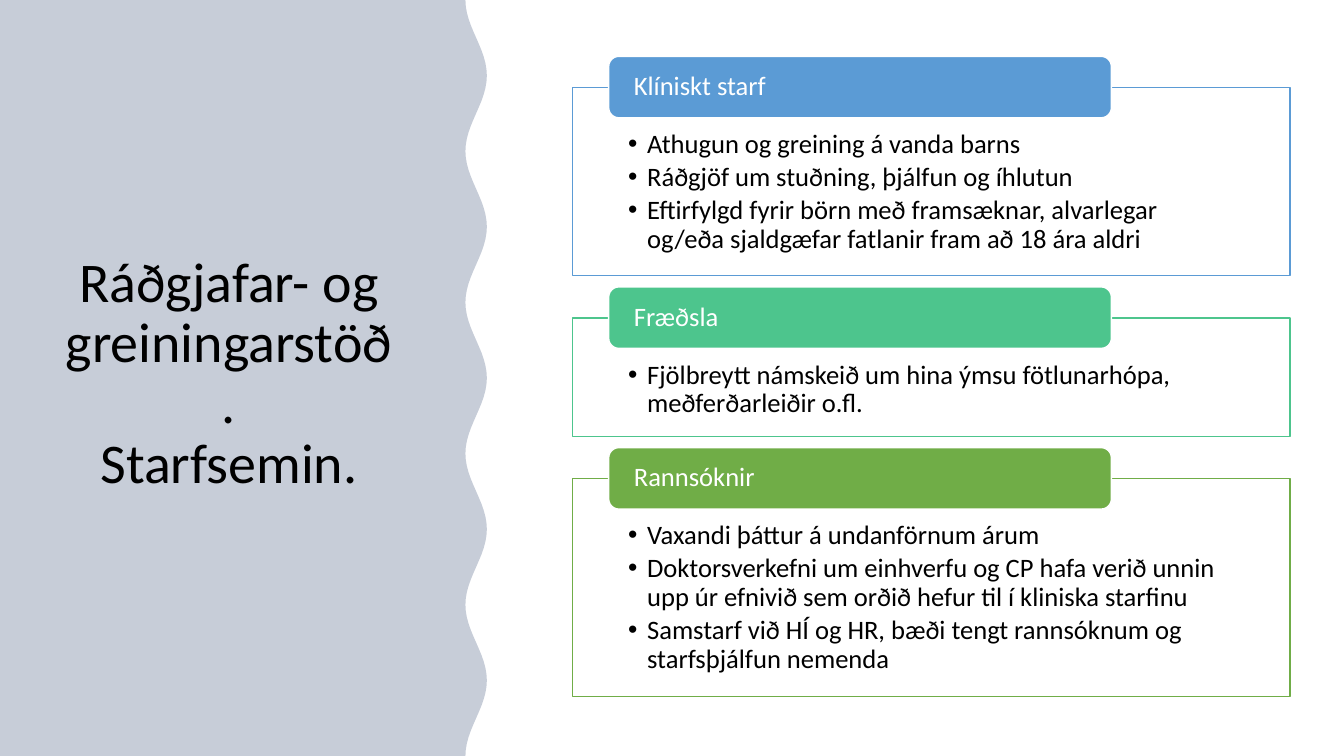
import math

import pptx
import pptx.dml.color
import pptx.enum.shapes
import pptx.enum.text
import pptx.oxml.ns
import pptx.util
from lxml import etree

Cm = pptx.util.Cm
Pt = pptx.util.Pt
RGBColor = pptx.dml.color.RGBColor
Shape = pptx.enum.shapes.MSO_SHAPE
Anchor = pptx.enum.text.MSO_ANCHOR
Align = pptx.enum.text.PP_ALIGN
qn = pptx.oxml.ns.qn

BLACK = RGBColor(0x00, 0x00, 0x00)
WHITE = RGBColor(0xFF, 0xFF, 0xFF)
NAVY = RGBColor(0x20, 0x38, 0x64)
BLUE = RGBColor(0x5B, 0x9B, 0xD5)
MINT = RGBColor(0x4D, 0xC5, 0x8D)
GREEN = RGBColor(0x70, 0xAD, 0x47)

SLIDE_WIDTH, SLIDE_HEIGHT = 33.87, 19.05
SECTION_LEFT, SECTION_WIDTH = 14.43, 18.08
FIRST_TOP, SECTION_GAP = 2.2, 1.06
TAB_INDENT, TAB_RISE = 0.91, 0.78
TAB_WIDTH, TAB_HEIGHT = 12.67, 1.55

SECTIONS = [
    ("Klíniskt starf", BLUE, 4.75, [
        "Athugun og greining á vanda barns",
        "Ráðgjöf um stuðning, þjálfun og íhlutun",
        "Eftirfylgd fyrir börn með framsæknar, alvarlegar og/eða sjaldgæfar "
        "fatlanir fram að 18 ára aldri",
    ]),
    ("Fræðsla", MINT, 2.99, [
        "Fjölbreytt námskeið um hina ýmsu fötlunarhópa, meðferðarleiðir o.fl.",
    ]),
    ("Rannsóknir", GREEN, 5.49, [
        "Vaxandi þáttur á undanförnum árum",
        "Doktorsverkefni um einhverfu og CP hafa verið unnin upp úr efnivið "
        "sem orðið hefur til í kliniska starfinu",
        "Samstarf við HÍ og HR, bæði tengt rannsóknum og starfsþjálfun nemenda",
    ]),
]


def write_text(shape, paragraphs, size=19, color=BLACK, align=Align.LEFT,
               anchor=Anchor.TOP, insets=(0.25, 0.13, 0.25, 0.13),
               space_after=0, bullet=False):
    """Fill a shape with paragraphs; insets are left, top, right, bottom in cm."""
    frame = shape.text_frame
    frame.word_wrap = True
    frame.vertical_anchor = anchor
    (frame.margin_left, frame.margin_top,
     frame.margin_right, frame.margin_bottom) = map(Cm, insets)
    frame.text = "\n".join(paragraphs)
    for paragraph in frame.paragraphs:
        paragraph.alignment = align
        paragraph.line_spacing = 0.9
        paragraph.space_after = Pt(space_after)
        for run in paragraph.runs:
            run.font.name = Deck.font
            run.font.size = Pt(size)
            run.font.color.rgb = color
        if bullet:
            properties = paragraph._p.get_or_add_pPr()
            properties.set("marL", str(Cm(0.48)))
            properties.set("indent", str(-Cm(0.48)))
            etree.SubElement(properties, qn("a:buFont")).set("typeface", "Arial")
            etree.SubElement(properties, qn("a:buChar")).set("char", "•")


class Deck:
    font = "Calibri"

    def __init__(self):
        self.presentation = pptx.Presentation()
        self.presentation.slide_width = Cm(SLIDE_WIDTH)
        self.presentation.slide_height = Cm(SLIDE_HEIGHT)
        blank = self.presentation.slide_layouts[6]
        self.slide = self.presentation.slides.add_slide(blank)

    def wavy_panel(self, middle, swing, waves, color, opacity):
        """Panel on the left whose right edge is a cosine wave."""
        steps = waves * 24
        edge = [(Cm(middle - swing * math.cos(2 * math.pi * waves * i / steps)),
                 Cm(SLIDE_HEIGHT * i / steps)) for i in range(steps + 1)]
        builder = self.slide.shapes.build_freeform(0, 0)
        builder.add_line_segments(edge + [(0, Cm(SLIDE_HEIGHT))], close=True)
        panel = builder.convert_to_shape()
        panel.shadow.inherit = False
        panel.fill.solid()
        panel.fill.fore_color.rgb = color
        panel.line.fill.background()
        tint = panel._element.spPr.find(qn("a:solidFill")).find(qn("a:srgbClr"))
        etree.SubElement(tint, qn("a:alpha")).set("val", str(opacity * 1000))

    def title(self, text, left, top, width, height):
        box = self.slide.shapes.add_textbox(*map(Cm, (left, top, width, height)))
        write_text(box, [text], size=40, align=Align.CENTER, anchor=Anchor.BOTTOM)

    def box(self, kind, left, top, width, height, fill, line):
        shape = self.slide.shapes.add_shape(
            kind, *map(Cm, (left, top, width, height)))
        shape.shadow.inherit = False
        shape.fill.solid()
        shape.fill.fore_color.rgb = fill
        shape.line.color.rgb = line
        shape.line.width = Pt(1)
        return shape

    def section(self, top, height, heading, color, points):
        """Outlined list with a coloured tab over its top edge."""
        outline = self.box(Shape.RECTANGLE, SECTION_LEFT, top,
                           SECTION_WIDTH, height, WHITE, color)
        write_text(outline, points, insets=(1.4, 1.09, 1.4, 0.38),
                   space_after=3, bullet=True)
        tab = self.box(Shape.ROUNDED_RECTANGLE, SECTION_LEFT + TAB_INDENT,
                       top - TAB_RISE, TAB_WIDTH, TAB_HEIGHT, color, WHITE)
        write_text(tab, [heading], color=WHITE, anchor=Anchor.MIDDLE,
                   insets=(0.56, 0, 0.56, 0))


def main():
    deck = Deck()
    deck.wavy_panel(middle=12, swing=0.27, waves=5, color=NAVY, opacity=25)
    deck.title("Ráðgjafar- og greiningarstöð.\vStarfsemin.", 1.27, 2, 9, 10.62)
    top = FIRST_TOP
    for heading, color, height, points in SECTIONS:
        deck.section(top, height, heading, color, points)
        top += height + SECTION_GAP
    deck.presentation.save("out.pptx")


if __name__ == "__main__":
    main()
